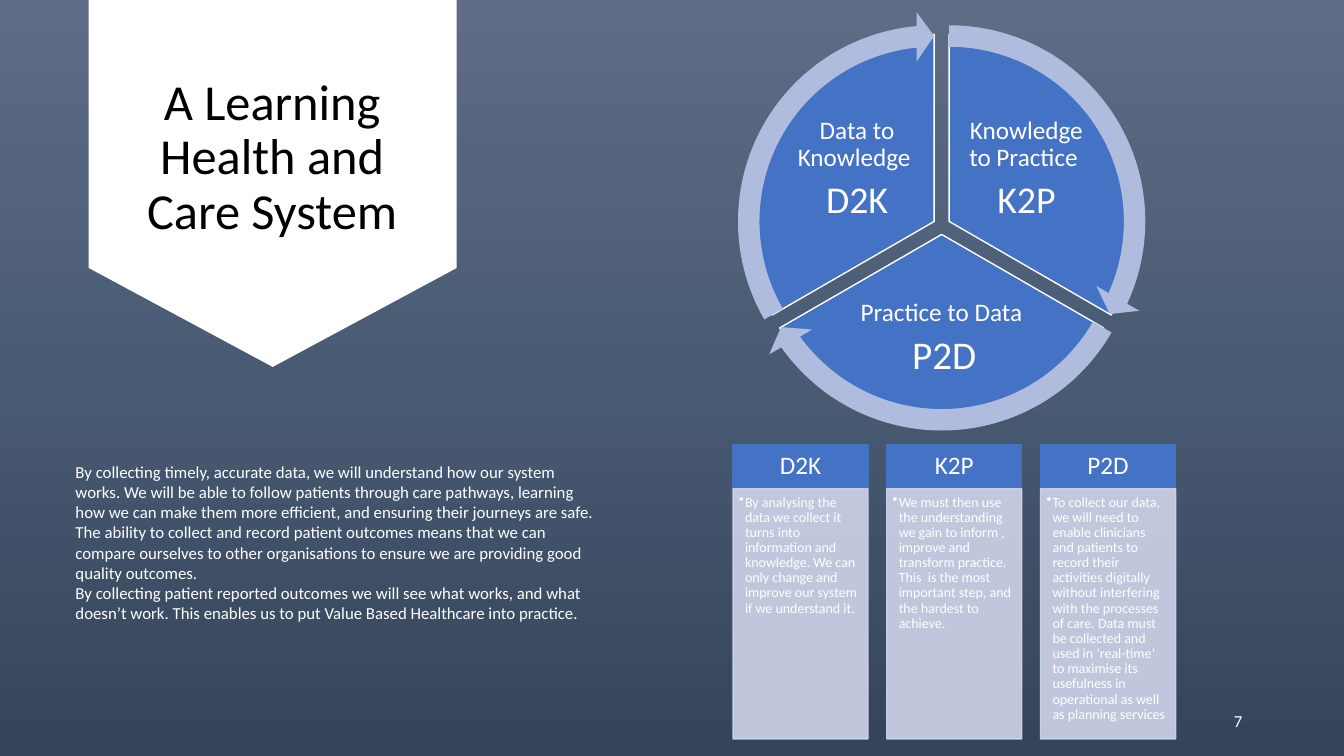
import copy
import math
from dataclasses import dataclass

import lxml.etree
import pptx
import pptx.dml.color
import pptx.enum.shapes
import pptx.enum.text
import pptx.oxml.ns
import pptx.util

Inches = pptx.util.Inches
Pt = pptx.util.Pt
SHAPE = pptx.enum.shapes.MSO_SHAPE
ALIGN = pptx.enum.text.PP_ALIGN
ANCHOR = pptx.enum.text.MSO_ANCHOR
qn = pptx.oxml.ns.qn


@dataclass(frozen=True)
class Theme:
    font: str = "Calibri"
    backdrop: tuple = ((0, "5E6D85"), (0.5, "495A73"), (1, "35445A"))
    white: str = "FFFFFF"
    black: str = "000000"
    blue: str = "4472C4"
    card: str = "CFD5EA"
    ring: str = "B0BCDE"
    card_opacity: int = 90
    title: int = 36
    heading: int = 18
    body: int = 12
    small: int = 10


THEME = Theme()

NOTES = (
    "By collecting timely, accurate data, we will understand how our system works. "
    "We will be able to follow patients through care pathways, learning how we can "
    "make them more efficient, and ensuring their journeys are safe.",
    "The ability to collect and record patient outcomes means that we can compare "
    "ourselves to other organisations to ensure we are providing good quality outcomes.",
    "By collecting patient reported outcomes we will see what works, and what doesn’t "
    "work. This enables us to put Value Based Healthcare into practice.",
)

CARDS = (
    ("D2K", "By analysing the data we collect it turns into information and knowledge. "
            "We can only change and improve our system if we understand it."),
    ("K2P", "We must then use the understanding we gain to inform , improve and "
            "transform practice. This  is the most important step, and the hardest "
            "to achieve."),
    ("P2D", "To collect our data, we will need to enable clinicians and patients to "
            "record their activities digitally without interfering with the processes "
            "of care. Data must be collected and used in ‘real-time’ to maximise its "
            "usefulness in operational as well as planning services"),
)

# name, code, code size, start and end degrees, label box relative to the hub
STAGES = (
    ("Knowledge to Practice ", "K2P", 27, 270, 30, (0.18, -1.11, 1.32, 1.1)),
    ("Practice to Data ", "P2D", 28, 30, 150, (-0.97, 0.64, 1.99, 0.97)),
    ("Data to Knowledge ", "D2K", 27, 150, 270, (-1.5, -1.11, 1.32, 1.1)),
)


def rgb(color):
    return pptx.dml.color.RGBColor.from_string(color)


def set_opacity(fill_parent, percent):
    """Make the solid fill directly inside an XML element translucent."""
    color = fill_parent.find(qn("a:solidFill"))[0]
    lxml.etree.SubElement(color, qn("a:alpha"), val=str(percent * 1000))


def add_box(slide, kind, box, fill, line=None, adjustments=()):
    sp = slide.shapes.add_shape(kind, *map(Inches, box))
    sp.shadow.inherit = False
    sp.fill.solid()
    sp.fill.fore_color.rgb = rgb(fill)
    if line:
        sp.line.color.rgb = rgb(line)
        sp.line.width = Pt(1)
    else:
        sp.line.fill.background()
    for i, value in enumerate(adjustments):
        sp.adjustments[i] = value
    return sp


def write_text(sp, *paragraphs, size=THEME.body, color=THEME.white, align=ALIGN.LEFT,
               anchor=ANCHOR.TOP, insets=(0.1, 0.05, 0.1, 0.05), spacing=1.0, after=0,
               bullet_indent=0):
    """Fill a shape with text; a paragraph is a string or a (string, size) pair."""
    tf = sp.text_frame
    tf.word_wrap = True
    tf.vertical_anchor = anchor
    tf.margin_left, tf.margin_top, tf.margin_right, tf.margin_bottom = map(Inches, insets)
    for i, item in enumerate(paragraphs):
        text, points = (item, size) if isinstance(item, str) else item
        p = tf.paragraphs[0] if i == 0 else tf.add_paragraph()
        p.alignment = align
        p.line_spacing = spacing
        p.space_after = Pt(points * after)
        if bullet_indent:
            pPr = p._p.get_or_add_pPr()
            pPr.set("marL", str(Inches(bullet_indent)))
            pPr.set("indent", str(-Inches(bullet_indent)))
            lxml.etree.SubElement(pPr, qn("a:buChar"), char="•")
        r = p.add_run()
        r.text = text
        r.font.name = THEME.font
        r.font.size = Pt(points)
        r.font.color.rgb = rgb(color)


def add_text(slide, box, *paragraphs, **text_format):
    write_text(slide.shapes.add_textbox(*map(Inches, box)), *paragraphs, **text_format)


def paint_background(slide):
    fill = slide.background.fill
    fill.gradient()
    fill.gradient_angle = 270
    stop_list = slide._element.xpath(".//a:gsLst")[0]
    stop_list.append(copy.deepcopy(stop_list[-1]))
    for stop, (position, color) in zip(fill.gradient_stops, THEME.backdrop):
        stop.position = position
        stop.color.rgb = rgb(color)


def add_title_banner(slide, box):
    x, y, w, h = box
    add_box(slide, SHAPE.DOWN_ARROW, box, THEME.white, adjustments=(1, 0.269))
    add_text(slide, (x + 0.24, y + 0.22, w - 0.49, h - 0.93),
             "A Learning Health and Care System", size=THEME.title, color=THEME.black,
             align=ALIGN.CENTER, anchor=ANCHOR.MIDDLE, spacing=0.9)


def add_cards(slide, box):
    x, y, w, h = box
    card_w, head_h = 1.34, 0.44
    step = (w - card_w) / (len(CARDS) - 1)
    for i, (code, text) in enumerate(CARDS):
        left = x + i * step
        head = add_box(slide, SHAPE.RECTANGLE, (left, y, card_w, head_h),
                       THEME.blue, THEME.blue)
        write_text(head, code, size=THEME.heading, align=ALIGN.CENTER,
                   anchor=ANCHOR.MIDDLE, insets=(0.14, 0.08, 0.14, 0.08), spacing=0.9)
        body = add_box(slide, SHAPE.RECTANGLE, (left, y + head_h, card_w, h - head_h),
                       THEME.card, THEME.card)
        set_opacity(body._element.spPr, THEME.card_opacity)
        set_opacity(body._element.spPr.find(qn("a:ln")), THEME.card_opacity)
        write_text(body, text, size=THEME.small, insets=(0.06, 0.06, 0.08, 0.09),
                   spacing=0.9, after=0.15, bullet_indent=0.06)


def add_cycle(slide, box):
    """Draw three wedges pushed out from the hub, each with its arrow outside."""
    x, y, w, h = box
    hub_x, hub_y = x + w / 2, y + h / 2
    gap, pie_d, unit = 0.086, 3.71, 0.6  # 0.6 adjustment units per degree
    head_angle = 3.275

    def wedge_box(start, diameter):
        middle = math.radians(start + 60)
        return (hub_x + gap * math.cos(middle) - diameter / 2,
                hub_y + gap * math.sin(middle) - diameter / 2, diameter, diameter)

    for name, code, code_size, start, end, (dx, dy, lw, lh) in STAGES:
        add_box(slide, SHAPE.PIE, wedge_box(start, pie_d), THEME.blue, THEME.white,
                (start * unit, end * unit))
        add_text(slide, (hub_x + dx, hub_y + dy, lw, lh), name, (code, code_size),
                 size=THEME.heading, align=ALIGN.CENTER, anchor=ANCHOR.MIDDLE,
                 insets=(0.03,) * 4, spacing=0.9, after=0.35)
    for _, _, _, start, end, _ in STAGES:
        add_box(slide, SHAPE.CIRCULAR_ARROW, wedge_box(start, w), THEME.ring,
                adjustments=(0.051, head_angle, end * unit - head_angle,
                             start * unit, 0.059))


def main():
    prs = pptx.Presentation()
    prs.slide_width, prs.slide_height = Inches(13.33), Inches(7.5)
    slide = prs.slides.add_slide(prs.slide_layouts[6])
    paint_background(slide)
    add_title_banner(slide, (0.88, -0.01, 3.65, 3.65))
    add_cards(slide, (7.27, 4.41, 4.39, 2.92))
    add_cycle(slide, (7.255, 0.155, 4.17, 4.17))
    add_text(slide, (0.65, 4.53, 5.35, 1.72), *NOTES)
    add_text(slide, (9.42, 6.95, 3, 0.4), "7", align=ALIGN.RIGHT, anchor=ANCHOR.MIDDLE)
    prs.save("out.pptx")


if __name__ == "__main__":
    main()
